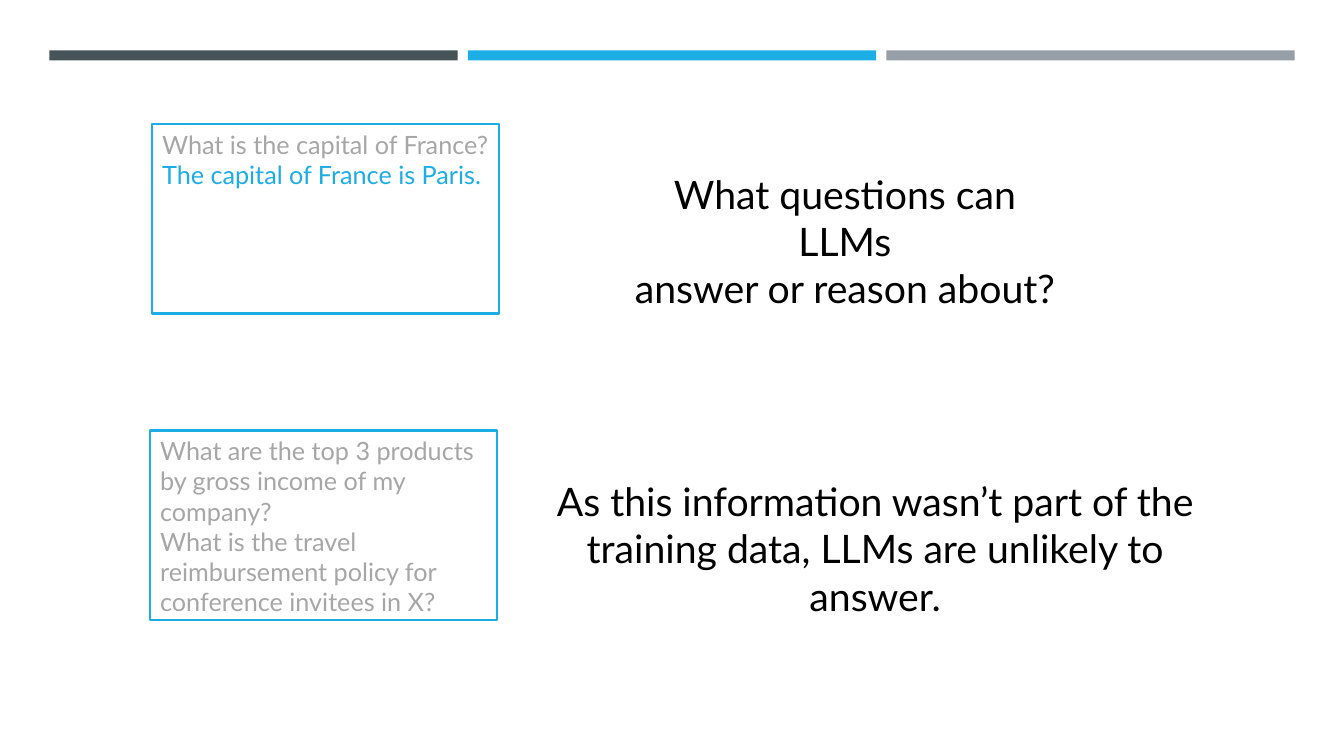
from dataclasses import dataclass

from pptx import Presentation
from pptx.dml.color import RGBColor
from pptx.enum.shapes import MSO_SHAPE
from pptx.enum.text import MSO_ANCHOR, PP_ALIGN
from pptx.util import Inches, Pt


@dataclass(frozen=True)
class Theme:
    """Hold the colours, font and sizes of the slide."""
    dark: str = "465359"
    blue: str = "1CADE4"
    grey: str = "969FA7"
    pale: str = "A6A6A6"
    black: str = "000000"
    font: str = "Lato"
    small: int = 18
    large: int = 28
    line: float = 1.75


THEME = Theme()


def rgb(code):
    """Turn a hex code into a colour."""
    return RGBColor.from_string(code)


def write(frame, lines, size, colors, align=PP_ALIGN.LEFT):
    """Write one paragraph per line, each in its own colour."""
    frame.word_wrap = True
    frame.vertical_anchor = MSO_ANCHOR.TOP
    for i, (text, color) in enumerate(zip(lines, colors)):
        para = frame.paragraphs[0] if i == 0 else frame.add_paragraph()
        para.alignment = align
        run = para.add_run()
        run.text = text
        run.font.name = THEME.font
        run.font.size = Pt(size)
        run.font.color.rgb = rgb(color)


def add_rect(slide, left, top, width, height):
    """Add a rectangle without shadow."""
    rect = slide.shapes.add_shape(
        MSO_SHAPE.RECTANGLE, Inches(left), Inches(top), Inches(width), Inches(height))
    rect.shadow.inherit = False
    return rect


def add_bar(slide, left, color):
    """Add one coloured bar of the header."""
    bar = add_rect(slide, left, 0.5, 4.05, 0.1)
    bar.fill.solid()
    bar.fill.fore_color.rgb = rgb(color)
    bar.line.fill.background()


def add_prompt(slide, left, top, lines, colors):
    """Add an outlined box with an example prompt."""
    box = add_rect(slide, left, top, 3.44, 1.88)
    box.fill.background()
    box.line.color.rgb = rgb(THEME.blue)
    box.line.width = Pt(THEME.line)
    write(box.text_frame, lines, size=THEME.small, colors=colors)


def add_remark(slide, left, top, width, lines):
    """Add a large centred remark."""
    box = slide.shapes.add_textbox(
        Inches(left), Inches(top), Inches(width), Inches(1.04))
    write(box.text_frame, lines, size=THEME.large,
          colors=[THEME.black] * len(lines), align=PP_ALIGN.CENTER)


def main():
    """Build the slide and save it."""
    deck = Presentation()
    deck.slide_width, deck.slide_height = Inches(13.33), Inches(7.5)
    slide = deck.slides.add_slide(deck.slide_layouts[6])

    for i, color in enumerate((THEME.dark, THEME.blue, THEME.grey)):
        add_bar(slide, 0.49 + 4.15 * i, color)

    add_prompt(slide, 1.51, 1.23,
               ["What is the capital of France?", "The capital of France is Paris."],
               [THEME.pale, THEME.blue])
    add_remark(slide, 6.15, 1.64, 4.46,
               ["What questions can LLMs", "answer or reason about?"])
    add_prompt(slide, 1.49, 4.27,
               ["What are the top 3 products by gross income of my company?",
                "What is the travel reimbursement policy for conference invitees in X?"],
               [THEME.pale, THEME.pale])
    add_remark(slide, 5.1, 4.69, 7.16,
               ["As this information wasn’t part of the",
                "training data, LLMs are unlikely to answer."])

    deck.save("out.pptx")


if __name__ == "__main__":
    main()
